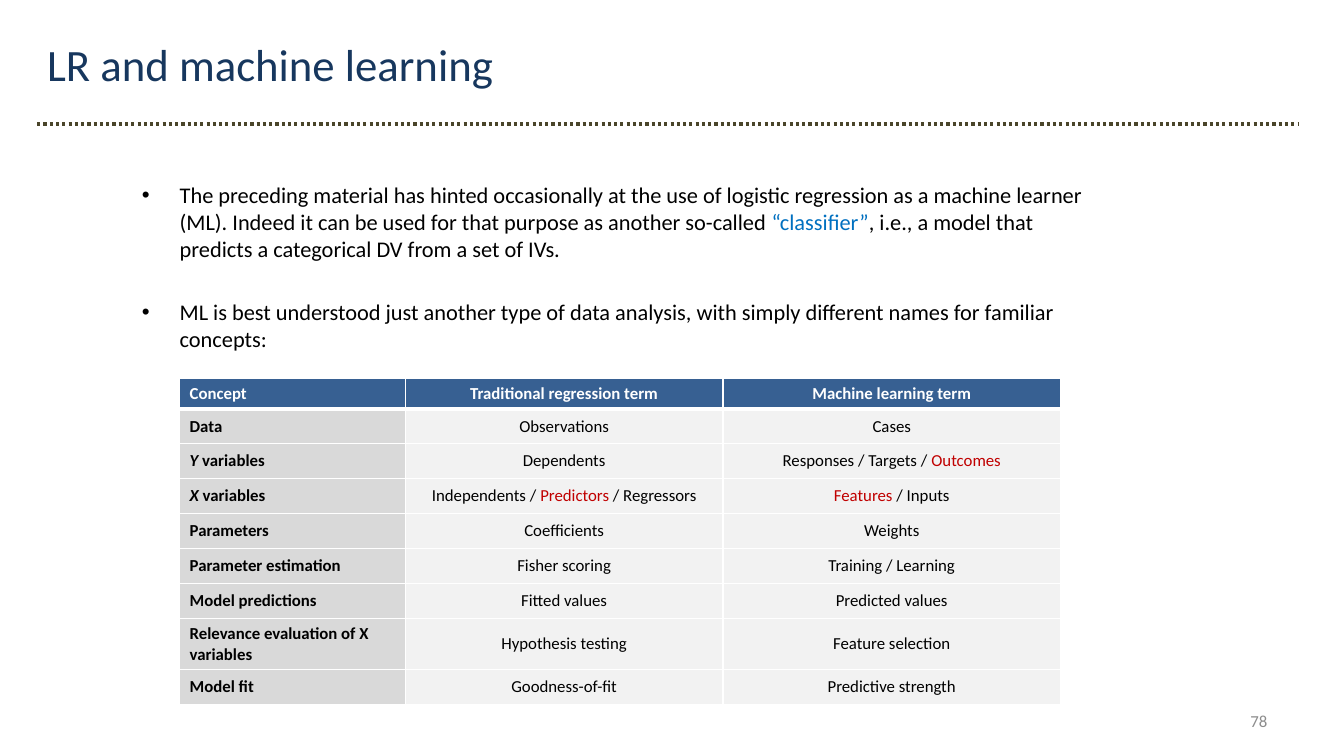
import pptx
import pptx.dml.color
import pptx.enum.dml
import pptx.enum.shapes
import pptx.enum.text
import pptx.oxml.ns
import pptx.util
from lxml import etree

Pt = pptx.util.Pt
ALIGN = pptx.enum.text.PP_ALIGN
MIDDLE = pptx.enum.text.MSO_ANCHOR.MIDDLE
qn = pptx.oxml.ns.qn

COLOURS = {
    "text": "000000", "title": "17375E", "rule": "4A452A", "number": "8C8C8C",
    "term": "0070C0", "accent": "C00000", "white": "FFFFFF",
    "header": "376092", "concept": "D9D9D9", "cell": "F2F2F2",
}

BULLETS = [
    ["The preceding material has hinted occasionally at the use of logistic "
     "regression as a machine learner (ML). Indeed it can be used for that "
     "purpose as another so-called ",
     ("“classifier”", "term"),
     ", i.e., a model that predicts a categorical DV from a set of IVs."],
    ["ML is best understood just another type of data analysis, with simply "
     "different names for familiar concepts:"],
]

TERMS = [
    [["Concept"], ["Traditional regression term"], ["Machine learning term"]],
    [["Data"], ["Observations"], ["Cases"]],
    [[("Y", "italic"), " variables"], ["Dependents"],
     ["Responses / Targets / ", ("Outcomes", "accent")]],
    [[("X", "italic"), " variables"],
     ["Independents / ", ("Predictors", "accent"), " / Regressors"],
     [("Features", "accent"), " / Inputs"]],
    [["Parameters"], ["Coefficients"], ["Weights"]],
    [["Parameter estimation"], ["Fisher scoring"], ["Training / Learning"]],
    [["Model predictions"], ["Fitted values"], ["Predicted values"]],
    [["Relevance evaluation of X variables"], ["Hypothesis testing"], ["Feature selection"]],
    [["Model fit"], ["Goodness-of-fit"], ["Predictive strength"]],
]
COLUMN_WIDTHS = [161.3, 226.8, 241.2]
ROW_HEIGHTS = [22] + [25] * 6 + [36.5, 25]


def rgb(name):
    return pptx.dml.color.RGBColor.from_string(COLOURS[name])


class SlideBuilder:
    font = "Calibri"

    def __init__(self, page):
        self.page = page

    def fill_para(self, para, spans, size, colour="text", bold=False, align=ALIGN.LEFT):
        """Fill a paragraph from plain strings and (text, colour or "italic") pairs."""
        para.alignment = align
        for item in spans:
            text, mark = (item, None) if isinstance(item, str) else item
            span = para.add_run()
            span.text = text
            span.font.name = self.font
            span.font.size = Pt(size)
            span.font.bold = bold
            span.font.italic = mark == "italic"
            span.font.color.rgb = rgb(mark if mark in COLOURS else colour)

    def box(self, left, top, width, height):
        frame = self.page.shapes.add_textbox(
            Pt(left), Pt(top), Pt(width), Pt(height)).text_frame
        frame.word_wrap = True
        return frame

    def label(self, bounds, text, size, colour, align=ALIGN.LEFT, anchor=None):
        frame = self.box(*bounds)
        frame.vertical_anchor = anchor
        self.fill_para(frame.paragraphs[0], [text], size, colour, align=align)

    def bullets(self, bounds, items, size, indent, gap):
        frame = self.box(*bounds)
        for index, spans in enumerate(items):
            para = frame.add_paragraph() if index else frame.paragraphs[0]
            props = para._p.get_or_add_pPr()
            props.set("marL", str(Pt(indent)))
            props.set("indent", str(Pt(-indent)))
            if index:
                para.space_before = Pt(gap)
            etree.SubElement(props, qn("a:buFont"), typeface="Arial")
            etree.SubElement(props, qn("a:buChar"), char="•")
            self.fill_para(para, spans, size)

    def dotted_rule(self, left, right, y, width):
        rule = self.page.shapes.add_connector(
            pptx.enum.shapes.MSO_CONNECTOR.STRAIGHT, Pt(left), Pt(y), Pt(right), Pt(y))
        rule.line.color.rgb = rgb("rule")
        rule.line.width = Pt(width)
        rule.line.dash_style = pptx.enum.dml.MSO_LINE.ROUND_DOT
        etree.SubElement(rule._element.spPr, qn("a:effectLst"))

    def borders(self, cell, widths):
        """Draw white borders; widths are for left, right, top and bottom."""
        props = cell._tc.get_or_add_tcPr()
        for side, width in zip("LRTB", widths):
            line = etree.SubElement(props, qn(f"a:ln{side}"), w=str(Pt(width)))
            fill = etree.SubElement(line, qn("a:solidFill"))
            etree.SubElement(fill, qn("a:srgbClr"), val=COLOURS["white"])

    def table(self, left, top, rows, widths, heights, size):
        grid = self.page.shapes.add_table(
            len(rows), len(widths), Pt(left), Pt(top),
            Pt(sum(widths)), Pt(sum(heights))).table
        for column, width in zip(grid.columns, widths):
            column.width = Pt(width)
        for r, (row, height) in enumerate(zip(rows, heights)):
            grid.rows[r].height = Pt(height)
            for c, spans in enumerate(row):
                cell = grid.cell(r, c)
                self.borders(cell, (1, 1, 3 if r == 1 else 1, 3 if r == 0 else 1))
                cell.fill.solid()
                cell.fill.fore_color.rgb = rgb(
                    "header" if r == 0 else "concept" if c == 0 else "cell")
                cell.vertical_anchor = MIDDLE
                self.fill_para(cell.text_frame.paragraphs[0], spans, size,
                               "white" if r == 0 else "text", bold=r == 0 or c == 0,
                               align=ALIGN.CENTER if c else ALIGN.LEFT)


def main():
    deck = pptx.Presentation()
    deck.slide_width, deck.slide_height = Pt(960), Pt(540)
    slide = SlideBuilder(deck.slides.add_slide(deck.slide_layouts[6]))
    slide.label((688.3, 500.4, 224, 28.8), "78", 12, "number", ALIGN.RIGHT, MIDDLE)
    slide.dotted_rule(26.6, 928, 88.6, 2.25)
    slide.label((26.6, 23, 838.8, 46), "LR and machine learning", 32, "title")
    slide.bullets((94.3, 126, 702.7, 388), BULLETS, size=16, indent=27, gap=26)
    slide.table(128.3, 270, TERMS, COLUMN_WIDTHS, ROW_HEIGHTS, size=12)
    deck.save("out.pptx")


if __name__ == "__main__":
    main()
